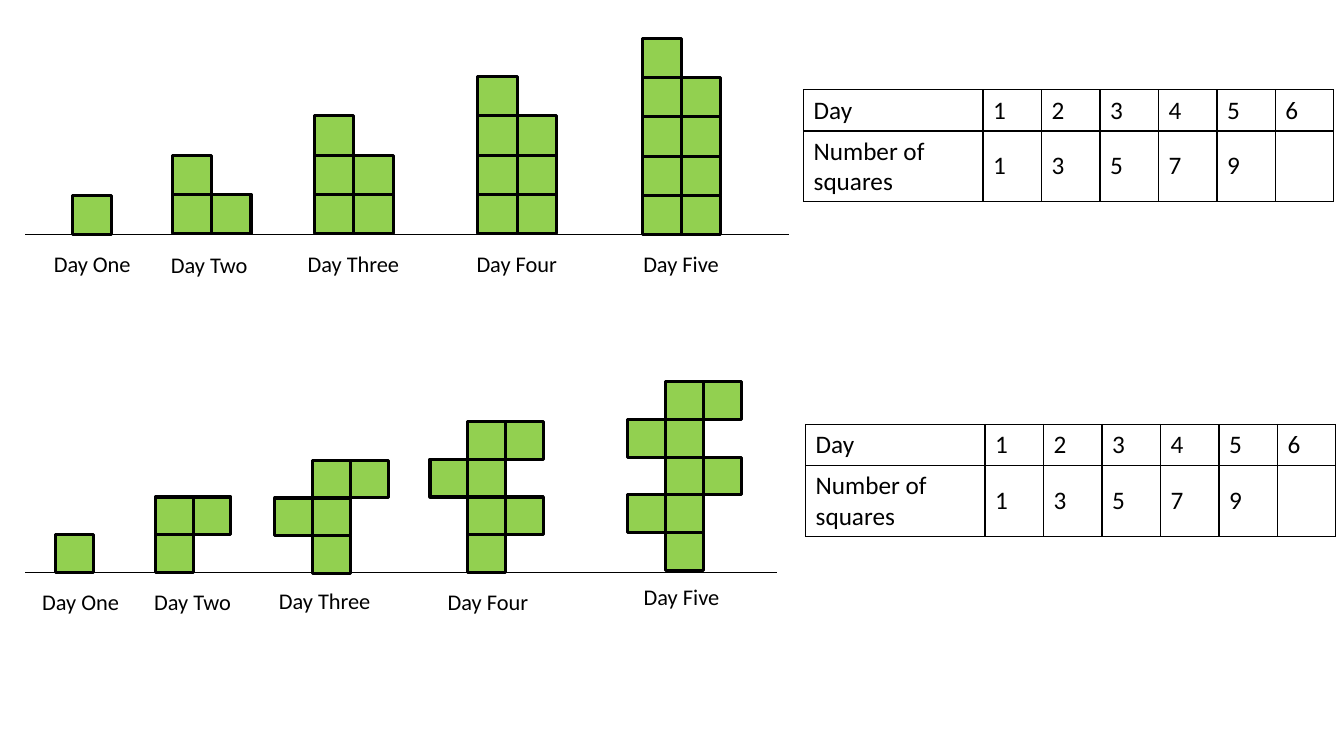
from lxml import etree
from pptx import Presentation
from pptx import util as u
from pptx.dml.color import RGBColor
from pptx.enum import shapes, text
from pptx.oxml import ns

COLOURS = {"square": "92D050", "ink": "000000"}
INK = RGBColor.from_string(COLOURS["ink"])
DAYS = ["One", "Two", "Three", "Four", "Five"]

presentation = Presentation()
presentation.slide_width = u.Inches(13.33)
presentation.slide_height = u.Inches(7.5)
slide = presentation.slides.add_slide(presentation.slide_layouts[6])


def format_text(frame, size):
    font_format = {"name": "Calibri", "size": u.Pt(size)}
    for paragraph in frame.paragraphs:
        for name, value in font_format.items():
            setattr(paragraph.font, name, value)
        paragraph.font.color.rgb = INK


def set_borders(cell):
    properties = cell._tc.get_or_add_tcPr()
    for position, edge in enumerate(["lnL", "lnR", "lnT", "lnB"]):
        line = etree.Element(ns.qn(f"a:{edge}"), w=str(u.Pt(1)))
        fill = etree.SubElement(line, ns.qn("a:solidFill"))
        etree.SubElement(fill, ns.qn("a:srgbClr"), val=COLOURS["ink"])
        properties.insert(position, line)


def_tower = {
    "side": 0.39,
    "ground": 2.33,
    "ground_end": 7.83,
    "columns": [0.72, 1.71, 3.12, 4.74, 6.37],
    "bases": [2.33, 2.32, 2.32, 2.32, 2.33],
    "labels": [(0.36, 1.11), (1.52, 1.11), (2.88, 1.25), (4.57, 1.11), (6.2, 1.11)],
    "label_tops": [2.43, 2.44, 2.43, 2.43, 2.43],
    "branching": False,
    "table": (7.97, 0.89),
}
def_branches = {
    "side": 7.5 / 20,
    "ground": 5.68,
    "ground_end": 7.71,
    "columns": [0.55, 1.54, 3.1, 4.64, 6.6],
    "bases": [5.68, 5.68, 5.69, 5.68, 5.66],
    "labels": [(0.27, 1.06), (1.38, 1.06), (2.46, 1.52), (4.31, 1.06), (6.23, 1.06)],
    "label_tops": [5.79, 5.79, 5.78, 5.79, 5.74],
    "branching": True,
    "table": (7.99, 4.21),
}

for pattern in [def_tower, def_branches]:
    group = slide.shapes.add_group_shape()
    side = pattern["side"]

    ground = group.shapes.add_connector(
        shapes.MSO_CONNECTOR.STRAIGHT,
        u.Inches(0.25), u.Inches(pattern["ground"]),
        u.Inches(pattern["ground_end"]), u.Inches(pattern["ground"]))
    ground.line.color.rgb = INK
    ground.line.width = u.Pt(0.5)
    etree.SubElement(ground._element.spPr, ns.qn("a:effectLst"))

    for index, day in enumerate(DAYS):
        squares = [(0, row) for row in range(index + 1)]
        if pattern["branching"]:
            squares += [(1 if (index - row) % 2 == 0 else -1, row)
                        for row in range(1, index + 1)]
        else:
            squares += [(1, row) for row in range(index)]
        for column, row in squares:
            square = group.shapes.add_shape(
                shapes.MSO_SHAPE.RECTANGLE,
                u.Inches(pattern["columns"][index] + column * side),
                u.Inches(pattern["bases"][index] - (row + 1) * side),
                u.Inches(side), u.Inches(side))
            square.shadow.inherit = False
            square.fill.solid()
            square.fill.fore_color.rgb = RGBColor.from_string(COLOURS["square"])
            square.line.color.rgb = INK
            square.line.width = u.Pt(2.25)

        left, width = pattern["labels"][index]
        label = group.shapes.add_textbox(
            u.Inches(left), u.Inches(pattern["label_tops"][index]),
            u.Inches(width), u.Inches(0.37))
        label.text_frame.word_wrap = True
        label.text_frame.text = f"Day {day}"
        label.text_frame.paragraphs[0].alignment = text.PP_ALIGN.CENTER
        format_text(label.text_frame, 16)

    left, top = pattern["table"]
    frame = slide.shapes.add_table(
        2, 7, u.Inches(left), u.Inches(top), u.Inches(5.26), u.Inches(1.11))
    table = frame.table
    for name in ["first_row", "horz_banding"]:
        setattr(table, name, False)
    for index, column in enumerate(table.columns):
        column.width = u.Inches(0.58 if index else 1.78)
    for row, height in zip(table.rows, [0.41, 0.7]):
        row.height = u.Inches(height)

    rows = [["Day", *range(1, 7)], ["Number of squares", *range(1, 10, 2), ""]]
    for row_index, values in enumerate(rows):
        for column_index, value in enumerate(values):
            cell = table.cell(row_index, column_index)
            cell.text = str(value)
            cell.vertical_anchor = text.MSO_ANCHOR.MIDDLE
            cell.fill.background()
            format_text(cell.text_frame, 18)
            set_borders(cell)

presentation.save("out.pptx")
